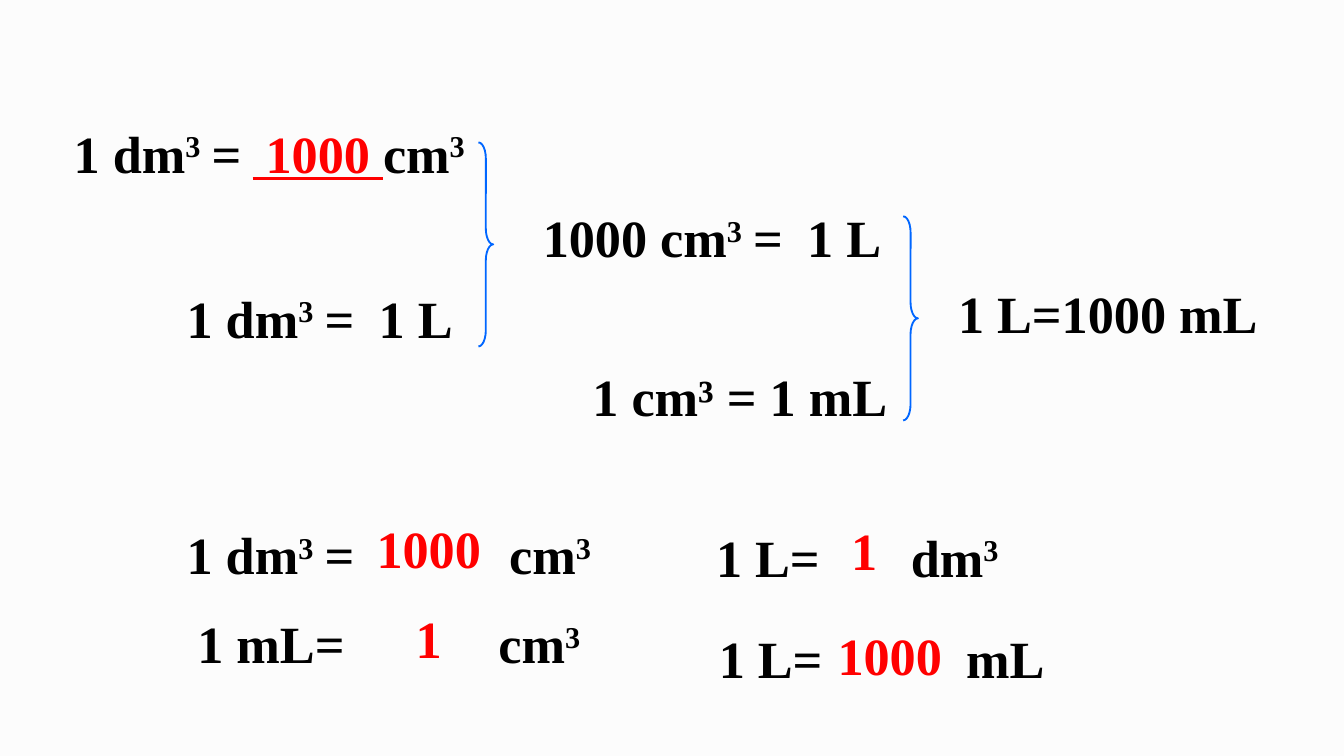
from lxml.etree import SubElement
from pptx import Presentation
from pptx.dml.color import RGBColor
from pptx.enum.shapes import MSO_SHAPE as Shape
from pptx.enum.text import MSO_AUTO_SIZE as AutoSize, PP_ALIGN as Align
from pptx.oxml.ns import qn
from pptx.util import Inches, Pt

BLACK = RGBColor(0x00, 0x00, 0x00)
RED = RGBColor(0xFF, 0x00, 0x00)
PINK = RGBColor(0xFF, 0x33, 0x99)
BLUE = RGBColor(0x00, 0x66, 0xFF)
PAPER = RGBColor(0xFC, 0xFC, 0xFC)

deck = Presentation()
deck.slide_width = Inches(10)
deck.slide_height = deck.slide_width * 9 // 16
slide = deck.slides.add_slide(deck.slide_layouts[6])
slide.background.fill.solid()
slide.background.fill.fore_color.rgb = PAPER

column = deck.slide_width / 100
row = deck.slide_height / 100
LINE_ROWS = 10.13


def add_line(left, top, width, color, align):
    box = slide.shapes.add_textbox(
        int(left * column), int(top * row), int(width * column), int(LINE_ROWS * row))
    box.text_frame.word_wrap = True
    box.text_frame.auto_size = AutoSize.SHAPE_TO_FIT_TEXT
    line = box.text_frame.paragraphs[0]
    line.alignment = align
    return line


def set_font(line, color):
    line.font.name = "Times New Roman"
    line.font.size = Pt(28)
    line.font.bold = True
    line.font.color.rgb = color


CUBE = ("3", BLACK, {"baseline": "30000"})
WIDE_CUBE = ("3", BLACK, {"baseline": "30000", "spc": "600"})
WIDE_EQUALS = ("=", BLACK, {"spc": "600"})
BLANK = ("\t", PINK, {"u": "sng"})
FILLED = (" 1000 ", RED, {"u": "sng"})
CUBIC_DM = ["1 dm", WIDE_CUBE, WIDE_EQUALS]

equations = [
    (4.5, 15.11, 40.6, None, CUBIC_DM + [FILLED, "cm", CUBE]),
    (12.9, 36.98, 23.8, None, CUBIC_DM + [" 1 L"]),
    (39.4, 26.31, 30.9, None, ["1000 cm", WIDE_CUBE, WIDE_EQUALS, " 1 L"]),
    (43.1, 47.29, 26.3, None, ["1 cm³ = 1 mL"]),
    (70.3, 36.27, 25.8, None, ["1 L=1000 mL"]),
    (12.9, 68.27, 36.5, 24, CUBIC_DM + [BLANK, "cm", CUBE]),
    (13.7, 80, 36.5, 22.4, ["1 mL", WIDE_EQUALS, BLANK, "cm", CUBE]),
    (52.3, 68.62, 27.3, 14.5, ["1 L=", BLANK, "dm", CUBE]),
    (52.5, 81.96, 40.6, 18.4, ["1 L=", BLANK, "mL"]),
]
for left, top, width, blank_end, parts in equations:
    equation = add_line(left, top, width, BLACK, Align.LEFT)
    if blank_end:
        tabs = SubElement(equation._p.get_or_add_pPr(), qn("a:tabLst"))
        SubElement(tabs, qn("a:tab"), pos=str(int(blank_end * column)), algn="l")
    set_font(equation, BLACK)
    for part in parts:
        words, color, marks = (part, BLACK, {}) if isinstance(part, str) else part
        run = equation.add_run()
        run.text = words
        if color != BLACK:
            run.font.color.rgb = color
        for mark, value in marks.items():
            run._r.get_or_add_rPr().set(mark, value)

answers = [
    ("1000", 24.7, 67.38, 14.4),
    ("1", 24.7, 79.29, 14.4),
    ("1", 60.9, 67.73, 6.8),
    ("1000", 59.5, 81.6, 13.4),
]
for number, left, top, width in answers:
    answer = add_line(left, top, width, RED, Align.CENTER)
    answer.add_run().text = number
    set_font(answer, RED)

for left, top in [(35.6, 18.84), (67.2, 28.62)]:
    brace = slide.shapes.add_shape(
        Shape.RIGHT_BRACE, int(left * column), int(top * row), int(1.1 * column), int(27 * row))
    brace.shadow.inherit = False
    brace.adjustments[0] = 1.09
    brace.adjustments[1] = 0.5
    brace.fill.background()
    brace.line.color.rgb = BLUE
    brace.line.width = Pt(1)

deck.save("out.pptx")
